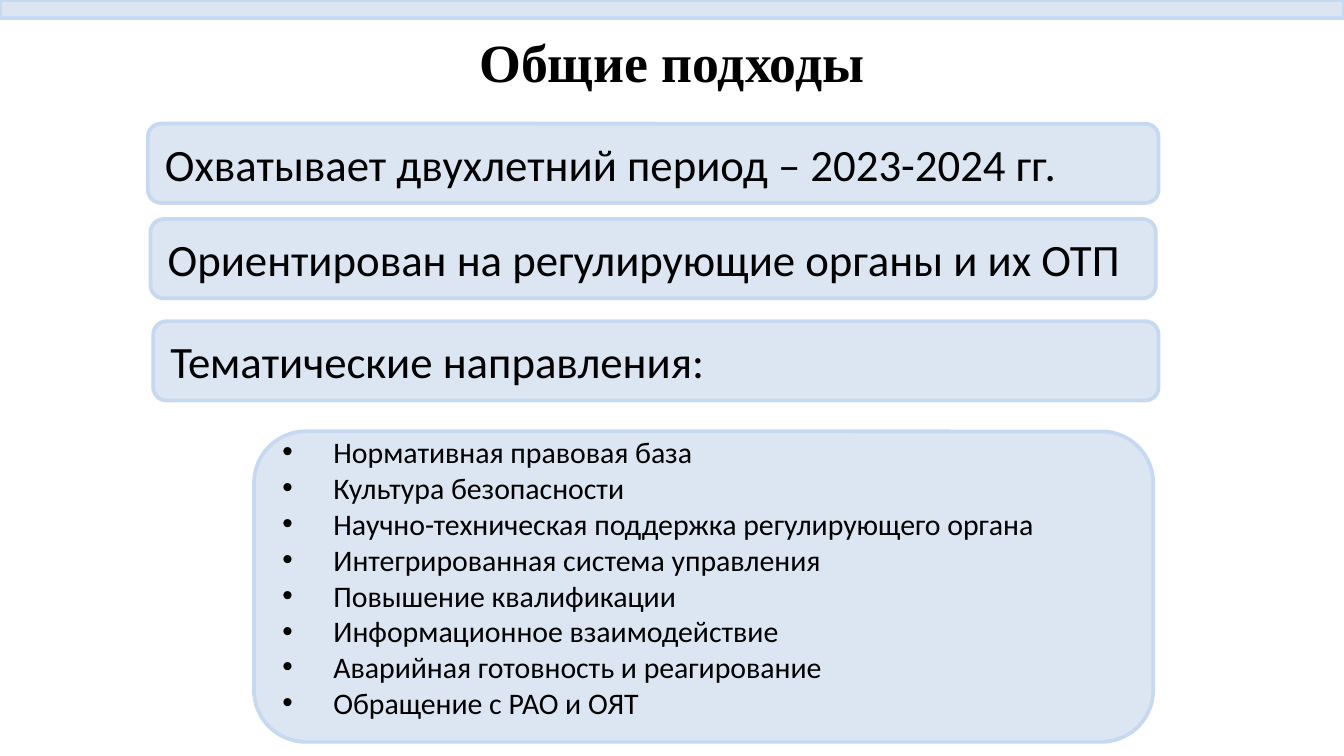
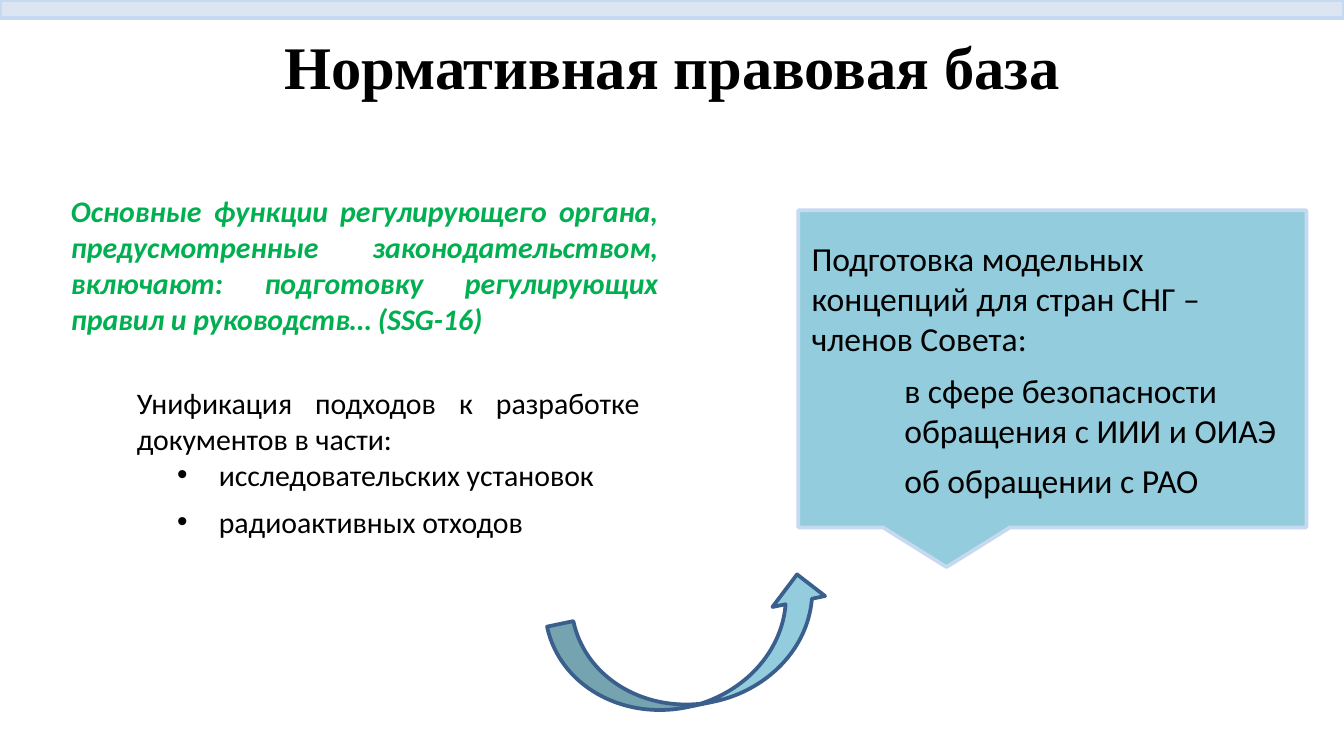
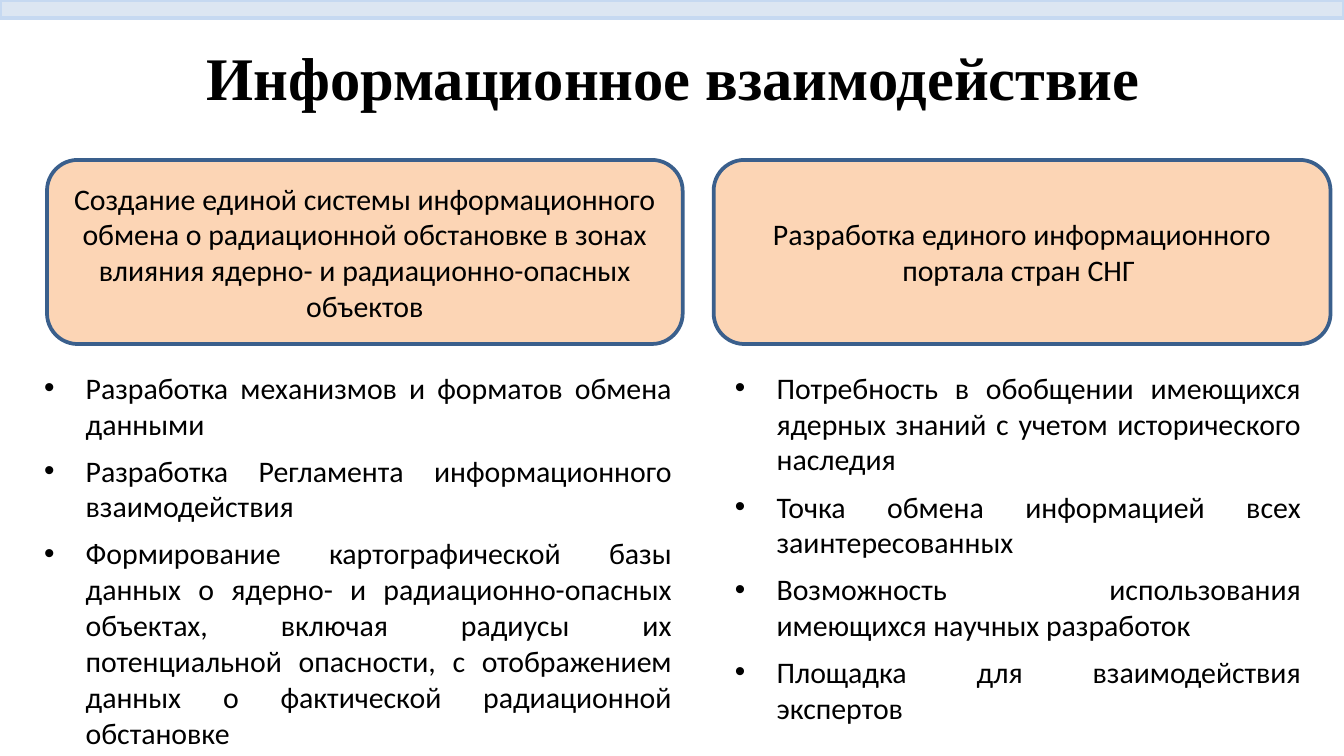
from pptx import Presentation
from pptx.dml.color import RGBColor
from pptx.enum.shapes import MSO_SHAPE
from pptx.enum.text import MSO_ANCHOR, PP_ALIGN
from pptx.util import Inches, Pt
from lxml import etree

CELL = Inches(0.1)
COLS, ROWS = 100, 56.25
BLACK = RGBColor(0x00, 0x00, 0x00)
GREEN = RGBColor(0x00, 0xB0, 0x50)
PALE = RGBColor(0xDC, 0xE6, 0xF2)
EDGE = RGBColor(0xC6, 0xD9, 0xF1)
AQUA = RGBColor(0x93, 0xCD, 0xDD)
PEACH = RGBColor(0xFC, 0xD5, 0xB5)
NAVY = RGBColor(0x3A, 0x5F, 0x8C)
BODY, SERIF, DOT = "Calibri", "Times New Roman", "Arial"
RECT, ROUND = MSO_SHAPE.RECTANGLE, MSO_SHAPE.ROUNDED_RECTANGLE
CALL, CURVE = MSO_SHAPE.RECTANGULAR_CALLOUT, MSO_SHAPE.CURVED_UP_ARROW
LEFT, MID, FULL = PP_ALIGN.LEFT, PP_ALIGN.CENTER, PP_ALIGN.JUSTIFY
CENTER = MSO_ANCHOR.MIDDLE
MAIN = "{http://schemas.openxmlformats.org/drawingml/2006/main}"

TOPICS = [
    "Нормативная правовая база",
    "Культура безопасности",
    "Научно-техническая поддержка регулирующего органа",
    "Интегрированная система управления",
    "Повышение квалификации",
    "Информационное взаимодействие",
    "Аварийная готовность и реагирование",
    "Обращение с РАО и ОЯТ",
]
BARS = [
    (11.2, 16.3, 74.8, "Ориентирован на регулирующие органы и их ОТП"),
    (11.4, 23.9, 74.8, "Тематические направления:"),
    (11, 9.2, 75.2, "Охватывает двухлетний период – 2023-2024 гг."),
]
PANELS = [
    (3.5, 47.3, 2.3, 48.7, 32,
     "Создание единой системы информационного обмена о радиационной "
     "обстановке в зонах влияния ядерно- и радиационно-опасных объектов",
     ["Разработка механизмов и форматов обмена данными",
      "Разработка Регламента информационного взаимодействия",
      "Формирование картографической базы данных о ядерно- и "
      "радиационно-опасных объектах, включая радиусы их потенциальной "
      "опасности, с отображением данных о фактической радиационной "
      "обстановке"]),
    (53.1, 45.9, 53.7, 44.1, 27.8,
     "Разработка единого информационного портала стран СНГ ",
     ["Потребность в обобщении имеющихся ядерных знаний с учетом "
      "исторического наследия",
      "Точка обмена информацией всех заинтересованных ",
      "Возможность использования имеющихся научных разработок",
      "Площадка для взаимодействия экспертов"]),
]


def grid(*cells):
    """Turn columns and rows into lengths."""
    return [round(cell * CELL) for cell in cells]


def shape(slide, kind, area, fill, edge):
    """Add a filled and outlined preset shape."""
    item = slide.shapes.add_shape(kind, *grid(*area))
    item.shadow.inherit = False
    item.fill.solid()
    item.fill.fore_color.rgb = fill
    item.line.color.rgb = edge
    item.line.width = Pt(2)
    item.text_frame.word_wrap = True
    return item


def box(slide, area):
    """Add a wrapping text box and return its frame."""
    frame = slide.shapes.add_textbox(*grid(*area)).text_frame
    frame.word_wrap = True
    return frame


def write(frame, text, size, align=LEFT, name=BODY, color=BLACK):
    """Write the next paragraph of a frame."""
    first = frame.paragraphs[0]
    para = frame.add_paragraph() if first.runs else first
    para.add_run().text = text
    para.alignment = align
    font = para.font
    font.size, font.name = Pt(size), name
    font.color.rgb = color
    return para


def indent(para, left, hang=0):
    """Set the left margin and the hanging part of a paragraph."""
    props = para._p.get_or_add_pPr()
    props.set("marL", str(Inches(left)))
    props.set("indent", str(-Inches(hang)))
    return props


def points(frame, items, left, hang, align=FULL, after=6):
    """Write a list of bulleted paragraphs."""
    for text in items:
        para = write(frame, text, 16, align)
        para.space_after = Pt(after)
        font = indent(para, left, hang).find(MAIN + "defRPr")
        font.addprevious(etree.Element(MAIN + "buFont", typeface=DOT))
        font.addprevious(etree.Element(MAIN + "buChar", char="•"))


def start(deck, title, left, top, high, size):
    """Add a slide with its title and top band."""
    slide = deck.slides.add_slide(deck.slide_layouts[6])
    frame = box(slide, (left, top, 90, high))
    frame.vertical_anchor = CENTER
    write(frame, title, size, MID, SERIF).font.bold = True
    shape(slide, RECT, (0, 0, COLS, 1.35), PALE, EDGE)
    return slide


def scope(deck):
    """Build the slide of general approaches."""
    slide = start(deck, "Общие подходы", 5, 1.4, 6.2, 28.8)
    for left, top, wide, text in BARS:
        bar = shape(slide, ROUND, (left, top, wide, 5.9), PALE, EDGE)
        write(bar.text_frame, text, 24)
    frame = shape(slide, ROUND, (18.9, 32.1, 66.9, 23.1), PALE, EDGE).text_frame
    frame.margin_top, frame.margin_bottom = grid(0, 1.4)
    points(frame, TOPICS, 0.38, 0.38, LEFT, 0)


def rules(deck):
    """Build the slide of the legal base."""
    slide = start(deck, "Нормативная правовая база", 5, 2.1, 5.5, 32.4)
    frame = box(slide, (9.2, 28.15, 39.4, 12.6))
    write(frame, "Унификация подходов к разработке документов в части: ",
          16, FULL)
    points(frame, ["исследовательских установок", "радиоактивных отходов"],
           0.61, 0.31)
    quote = write(box(slide, (4.3, 13.85, 45.7, 11.8)),
                  "Основные функции регулирующего органа, предусмотренные "
                  "законодательством, включают: подготовку регулирующих "
                  "правил и руководств… (SSG-16)", 16, FULL, color=GREEN)
    quote.font.bold = quote.font.italic = True
    frame = shape(slide, CALL, (59.4, 15.65, 37.8, 23.6), AQUA, EDGE).text_frame
    write(frame, "Подготовка модельных концепций для стран СНГ – "
                 "членов Совета:", 18)
    for text, gap in [("в сфере безопасности обращения с ИИИ и ОИАЭ", 6),
                      ("об обращении с РАО", 5)]:
        para = write(frame, text, 18)
        para.space_before = Pt(gap)
        indent(para, 0.69)
    arrow = shape(slide, CURVE, (41.3, 44.4, 21, 8), AQUA, NAVY)
    arrow.rotation = 348.2


def share(deck):
    """Build the slide of information exchange."""
    slide = start(deck, "Информационное взаимодействие", 5.1, 2.9, 5.5, 32.4)
    for left, wide, edge, span, high, head, items in PANELS:
        panel = shape(slide, ROUND, (left, 11.9, wide, 13.7), PEACH, NAVY)
        write(panel.text_frame, head, 16, MID)
        points(box(slide, (edge, 27, span, high)), items, 0.31, 0.31)


def main():
    """Build and save the deck."""
    deck = Presentation()
    deck.slide_width, deck.slide_height = grid(COLS, ROWS)
    scope(deck)
    rules(deck)
    share(deck)
    deck.save("out.pptx")


if __name__ == "__main__":
    main()
